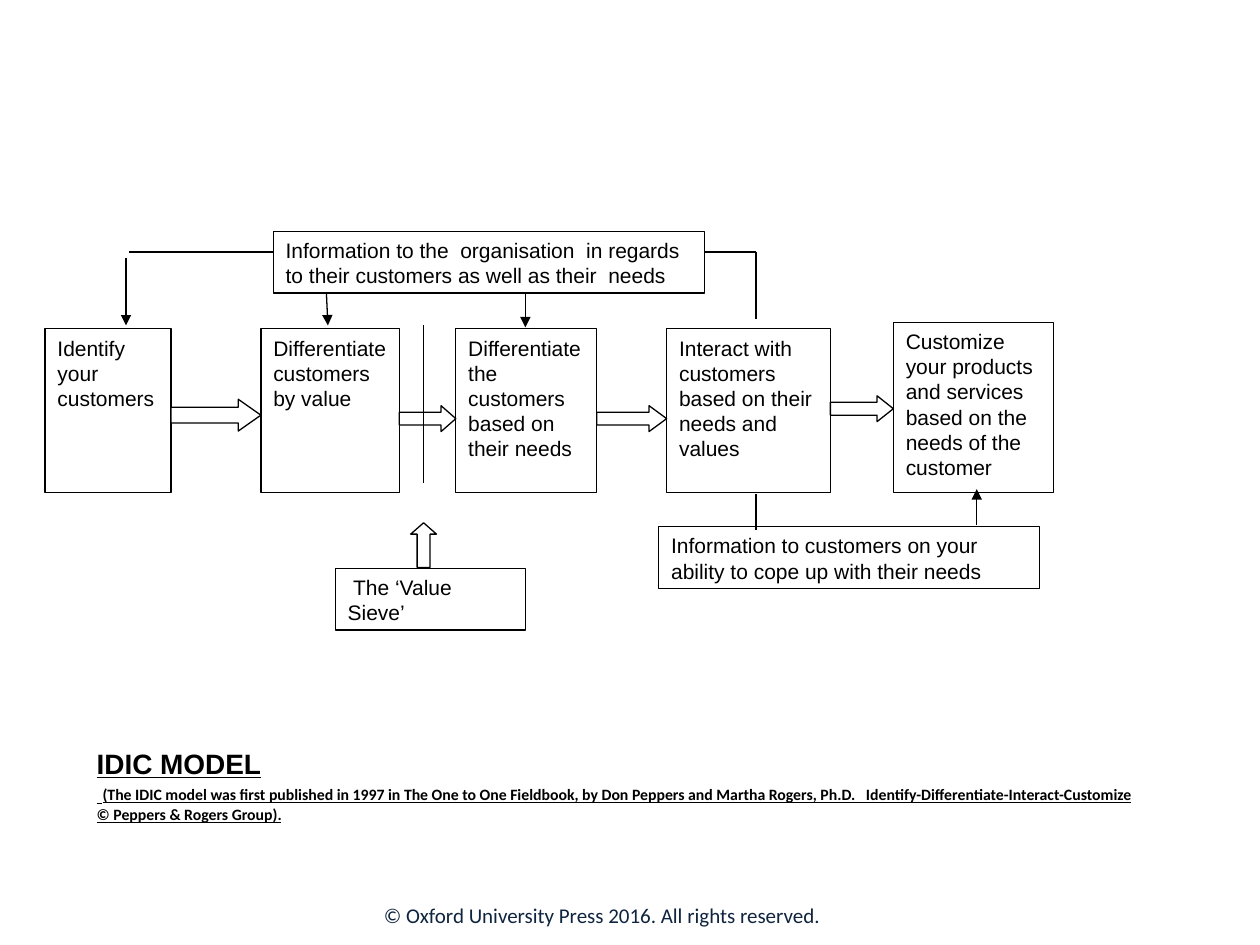
from lxml import etree
from pptx import Presentation
from pptx.dml.color import RGBColor
from pptx.enum import shapes, text
from pptx.oxml.ns import qn
from pptx.util import Cm, Pt

HUES = {"ink": "000000", "paper": "FFFFFF", "navy": "0F243E"}
KINDS = shapes.MSO_SHAPE


def hue(name):
    """Look up a named colour."""
    return RGBColor.from_string(HUES[name])


def write(para, words, size=12, font="Arial", color="ink", bold=False, line=False):
    """Add one formatted run to a paragraph."""
    run = para.add_run()
    run.text = words
    face = run.font
    face.name, face.size, face.bold, face.underline = font, Pt(size), bold, line
    face.color.rgb = hue(color)


class Board:
    """Hold the style and the current slide."""

    def __init__(self, slide, width=0.75):
        self.slide, self.width = slide, Pt(width)

    def shape(self, kind, *area):
        """Add an outlined preset shape."""
        item = self.slide.shapes.add_shape(kind, *map(Cm, area))
        item.shadow.inherit = False
        item.fill.solid()
        item.fill.fore_color.rgb = hue("paper")
        item.line.color.rgb = hue("ink")
        item.line.width = self.width
        return item

    def box(self, words, *area):
        """Add a rectangle with text at its top left."""
        frame = self.shape(KINDS.RECTANGLE, *area).text_frame
        frame.word_wrap = True
        frame.vertical_anchor = text.MSO_ANCHOR.TOP
        para = frame.paragraphs[0]
        para.alignment = text.PP_ALIGN.LEFT
        write(para, words)

    def arrow(self, kind, head, *area):
        """Add a block arrow with the given head length."""
        item = self.shape(kind, *area)
        item.adjustments[0], item.adjustments[1] = 0.5, head

    def line(self, *ends, tip=False):
        """Add a straight line, with an arrowhead if asked."""
        item = self.slide.shapes.add_connector(
            shapes.MSO_CONNECTOR.STRAIGHT, *map(Cm, ends))
        item.line.color.rgb = hue("ink")
        item.line.width = self.width
        if tip:
            etree.SubElement(item.line._get_or_add_ln(), qn("a:tailEnd"), type="triangle")
        etree.SubElement(item._element.spPr, qn("a:effectLst"))

    def label(self, *area):
        """Add a wrapped text box and return its frame."""
        frame = self.slide.shapes.add_textbox(*map(Cm, area)).text_frame
        frame.word_wrap = True
        frame.vertical_anchor = text.MSO_ANCHOR.MIDDLE
        return frame


def main():
    """Build the slide."""
    deck = Presentation()
    deck.slide_width, deck.slide_height = Cm(25.4), Cm(19.05)
    board = Board(deck.slides.add_slide(deck.slide_layouts[6]))

    top, tall, low = 6.63, 3.3, 1.24
    steps = [
        ("Identify your customers", 0.91, top, 2.54, tall),
        ("Differentiate customers by value", 5.26, top, 2.79, tall),
        ("Differentiate the customers based on their needs", 9.19, top, 2.84, tall),
        ("Interact with customers based on their needs and values", 13.44, top, 3.3, tall),
        ("Customize your products and services based on the needs of the customer",
         18.01, 6.5, 3.23, 3.43),
    ]
    notes = [
        ("Information to customers on your ability to cope up with their needs",
         13.28, 10.62, 7.67, low),
        (" The ‘Value Sieve’", 6.76, 11.46, 3.84, low),
        ("Information to the  organisation  in regards to their customers "
         "as well as their  needs", 5.51, 4.67, 8.69, low),
    ]
    for item in steps + notes:
        board.box(*item)

    flows = [(8.05, 0.64, 0.71), (8.18, 0.52, 0.57), (8.18, 0.52, 0.68), (7.98, 0.52, 0.63)]
    for prev, step, (y, high, head) in zip(steps, steps[1:], flows):
        x = prev[1] + prev[3]
        board.arrow(KINDS.RIGHT_ARROW, head, x, y, step[1] - x, high)
    board.arrow(KINDS.UP_ARROW, 0.44, 8.28, 10.54, 0.52, 0.9)

    for ends in [(15.24, 9.95, 15.24, 10.69), (14.2, 5.08, 15.24, 5.08),
                 (15.24, 5.08, 15.24, 6.43), (5.51, 5.08, 2.6, 5.08),
                 (8.54, 6.56, 8.54, 9.73)]:
        board.line(*ends)
    for ends in [(19.69, 10.59, 19.69, 9.86), (2.54, 5.21, 2.54, 6.56),
                 (6.58, 5.91, 6.61, 6.56), (10.59, 5.91, 10.59, 6.6)]:
        board.line(*ends, tip=True)

    frame = board.label(1.7, 13.54, 21.39, 4.14)
    frame.margin_top = Cm(0.56)
    write(frame.paragraphs[0], "IDIC MODEL", size=16, bold=True, line=True)
    cite = frame.add_paragraph()
    write(cite, " ", bold=True, line=True)
    write(cite, "(The IDIC model was first published in 1997 in The One to One Fieldbook, "
          "by Don Peppers and Martha Rogers, Ph.D.   Identify-Differentiate-Interact-Customize "
          "© Peppers & Rogers Group).", size=9, font="Calibri", bold=True, line=True)

    foot = board.label(7.49, 17.93, 10.62, 1.02)
    write(foot.paragraphs[0], "© Oxford University Press 2016. All rights reserved.",
          font="Calibri", color="navy")
    deck.save("out.pptx")


if __name__ == "__main__":
    main()
